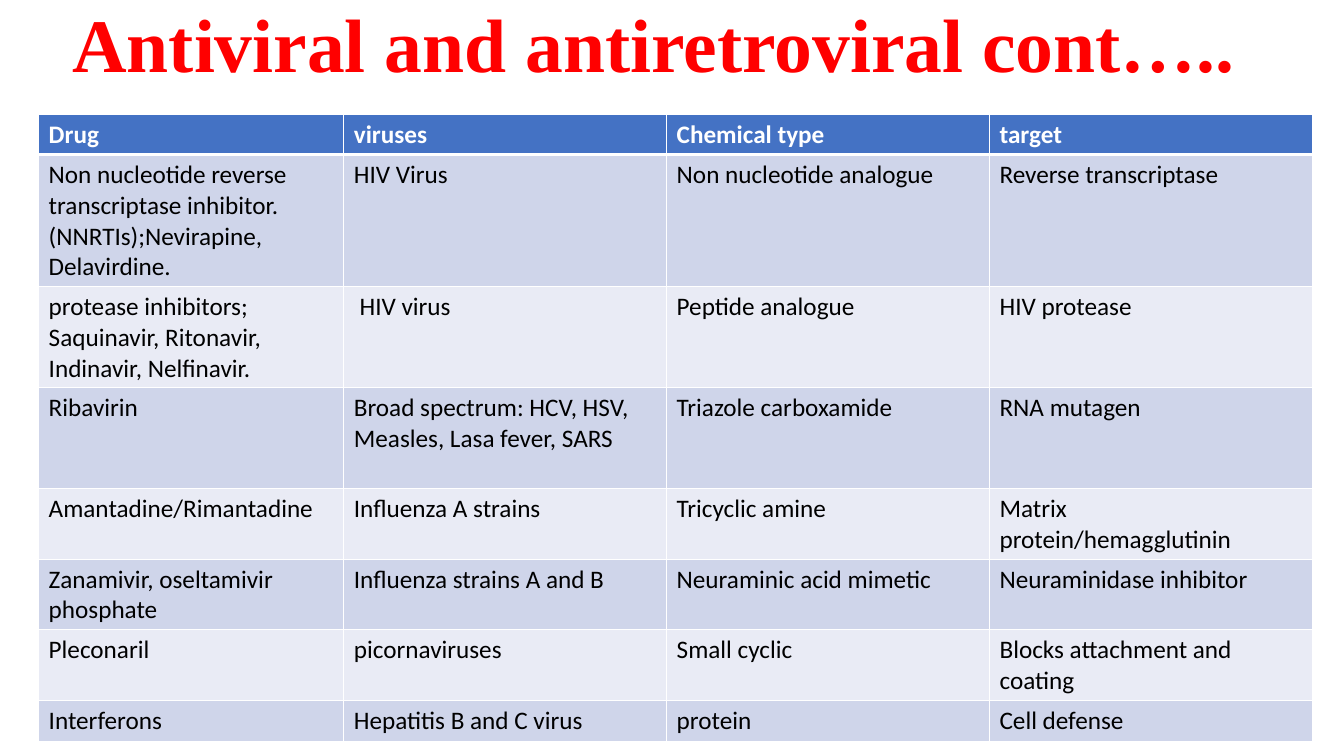
from lxml import etree
from pptx import Presentation
from pptx.dml.color import RGBColor
from pptx.enum.text import MSO_ANCHOR
from pptx.oxml.ns import qn
from pptx.util import Pt

MIDDLE = MSO_ANCHOR.MIDDLE
COLORS = {
    "title": "FF0000",
    "header": "4472C4",
    "odd": "CFD5EA",
    "even": "E9EBF5",
    "text": "000000",
    "white": "FFFFFF",
}
DRUGS = [
    ("Drug", "viruses", "Chemical type", "target"),
    ("Non nucleotide reverse transcriptase inhibitor.(NNRTIs);Nevirapine, Delavirdine.",
     "HIV Virus", "Non nucleotide analogue", "Reverse transcriptase"),
    ("protease inhibitors; Saquinavir, Ritonavir, Indinavir, Nelfinavir.",
     " HIV virus", "Peptide analogue", "HIV protease"),
    ("Ribavirin", "Broad spectrum: HCV, HSV, Measles, Lasa fever, SARS",
     "Triazole carboxamide", "RNA mutagen"),
    ("Amantadine/Rimantadine", "Influenza A strains", "Tricyclic amine",
     "Matrix protein/hemagglutinin"),
    ("Zanamivir, oseltamivir phosphate", "Influenza strains A and B",
     "Neuraminic acid mimetic", "Neuraminidase inhibitor"),
    ("Pleconaril", "picornaviruses", "Small cyclic", "Blocks attachment and coating"),
    ("Interferons", "Hepatitis B and C virus", "protein", "Cell defense"),
]
COLUMN_WIDTHS = [218, 230.6, 230.6, 230.6]
ROW_HEIGHTS = [29, 94.5, 72, 72, 50.5, 50.5, 50.5, 29]


def style_font(paragraph, name, size, color, bold):
    font = paragraph.font
    font.name = name
    font.size = Pt(size)
    font.bold = bold
    font.color.rgb = RGBColor.from_string(COLORS[color])


def add_border(cell, side, width):
    line = etree.SubElement(cell._tc.get_or_add_tcPr(), qn("a:" + side), w=str(Pt(width)))
    fill = etree.SubElement(line, qn("a:solidFill"))
    etree.SubElement(fill, qn("a:srgbClr"), val=COLORS["white"])


prs = Presentation()
prs.slide_width = Pt(960)
prs.slide_height = Pt(540)
slide = prs.slides.add_slide(prs.slide_layouts[6])

title = slide.shapes.add_textbox(Pt(8.6), Pt(8), Pt(951), Pt(53)).text_frame
title.word_wrap = True
title.vertical_anchor = MIDDLE
title.margin_left = Pt(43)
heading = title.paragraphs[0]
heading.text = "Antiviral and antiretroviral cont….."
heading.line_spacing = 0.9
style_font(heading, "Times New Roman", 54, "title", True)

drug_table = slide.shapes.add_table(
    len(DRUGS), len(COLUMN_WIDTHS), Pt(27.6), Pt(81.4),
    Pt(sum(COLUMN_WIDTHS)), Pt(sum(ROW_HEIGHTS))).table
for column, width in zip(drug_table.columns, COLUMN_WIDTHS):
    column.width = Pt(width)
for row, height in zip(drug_table.rows, ROW_HEIGHTS):
    row.height = Pt(height)

for r, entries in enumerate(DRUGS):
    is_header = r == 0
    band = "header" if is_header else "odd" if r % 2 else "even"
    for c, entry in enumerate(entries):
        cell = drug_table.cell(r, c)
        cell.text = entry
        style_font(cell.text_frame.paragraphs[0], "Calibri", 18,
                   "white" if is_header else "text", is_header)
        for side in ("lnL", "lnR", "lnT", "lnB"):
            header_rule = (r, side) in ((0, "lnB"), (1, "lnT"))
            add_border(cell, side, 3 if header_rule else 1)
        cell.fill.solid()
        cell.fill.fore_color.rgb = RGBColor.from_string(COLORS[band])

prs.save("out.pptx")
